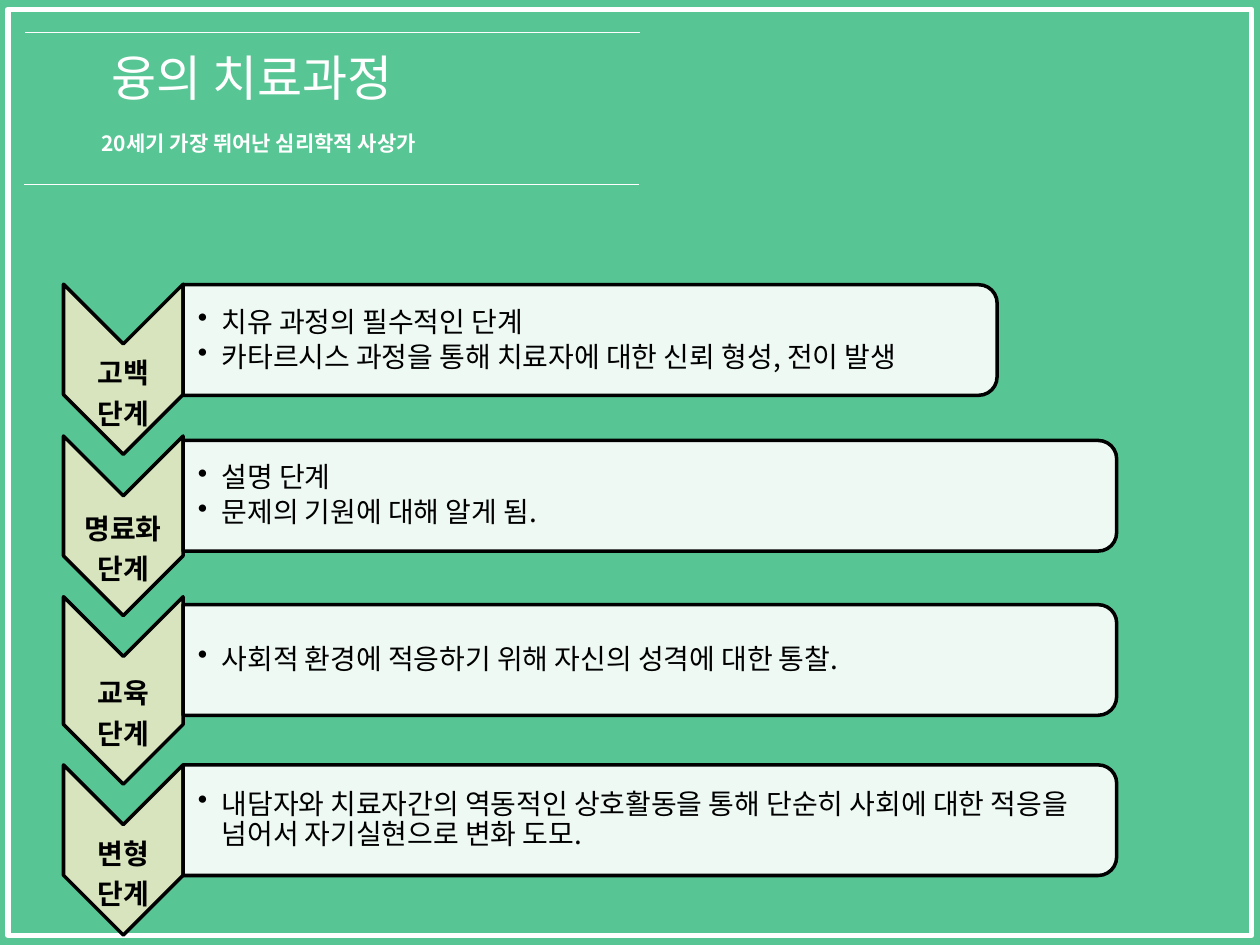
from lxml import etree
from pptx import Presentation
from pptx.dml.color import RGBColor
from pptx.enum.shapes import MSO_CONNECTOR, MSO_SHAPE
from pptx.enum.text import MSO_ANCHOR, PP_ALIGN
from pptx.oxml.ns import qn
from pptx.util import Cm, Pt

RECT, CHEVRON, BAR = MSO_SHAPE.RECTANGLE, MSO_SHAPE.CHEVRON, MSO_SHAPE.ROUND_2_SAME_RECTANGLE
TOP, MIDDLE = MSO_ANCHOR.TOP, MSO_ANCHOR.MIDDLE
LEFT, CENTER = PP_ALIGN.LEFT, PP_ALIGN.CENTER
FONT = "Noto Sans CJK KR"
COLORS = {"green": "57C594", "white": "FFFFFF", "olive": "D7E4BD", "black": "000000"}


def add_shape(kind, x, y, w, h, fill=None, line="black", weight=2, turned=False, alpha=None):
    if turned:
        x, y, w, h = x + (w - h) / 2, y + (h - w) / 2, h, w
    sp = s.shapes.add_shape(kind, Cm(x), Cm(y), Cm(w), Cm(h))
    sp.rotation = 90 if turned else 0
    sp.shadow.inherit = False
    if fill:
        sp.fill.solid()
        sp.fill.fore_color.rgb = RGBColor.from_string(COLORS[fill])
    else:
        sp.fill.background()
    if alpha:
        color = sp.fill._xPr.find(".//" + qn("a:srgbClr"))
        etree.SubElement(color, qn("a:alpha")).set("val", str(alpha * 1000))
    sp.line.color.rgb = RGBColor.from_string(COLORS[line])
    sp.line.width = Pt(weight)


def set_text(sp, lines, size=16, color="black", bold=False, align=LEFT, anchor=MIDDLE,
             margins=None, spacing=None, after=0, bullet=False):
    tf = sp.text_frame
    tf.word_wrap = True
    tf.vertical_anchor = anchor
    if margins:
        tf.margin_left, tf.margin_top, tf.margin_right, tf.margin_bottom = map(Cm, margins)
    for i, text in enumerate(lines):
        p = tf.paragraphs[0] if i == 0 else tf.add_paragraph()
        p.alignment = align
        p.space_after = Pt(after)
        if spacing:
            p.line_spacing = Pt(spacing)
        if bullet:
            pPr = p._p.get_or_add_pPr()
            pPr.set("marL", str(Cm(0.48)))
            pPr.set("indent", str(Cm(-0.48)))
            etree.SubElement(pPr, qn("a:buChar")).set("char", "•")
        r = p.add_run()
        r.text = text
        r.font.name = FONT
        r.font.size = Pt(size)
        r.font.bold = bold
        r.font.color.rgb = RGBColor.from_string(COLORS[color])
        etree.SubElement(r._r.get_or_add_rPr(), qn("a:ea")).set("typeface", FONT)


prs = Presentation()
prs.slide_width, prs.slide_height = Cm(25.4), Cm(19.05)
s = prs.slides.add_slide(prs.slide_layouts[5])

add_shape(RECT, 0, 0, 25.4, 19.05, fill="green", line="green")
add_shape(RECT, 0.16, 0.19, 25.07, 18.67, line="white", weight=3)

title = s.shapes.title
title._element.getparent().append(title._element)
title.left, title.top, title.width, title.height = Cm(1.57), Cm(0.58), Cm(7.04), Cm(1.96)
set_text(title, ["융의 치료과정"], size=28, color="white", align=CENTER)

steps = [
    ("고백", 5.73, 3.43, 5.74, 16.41,
     ["치유 과정의 필수적인 단계", "카타르시스 과정을 통해 치료자에 대한 신뢰 형성, 전이 발생"]),
    ("명료화", 8.79, 3.62, 8.88, 18.82, ["설명 단계", "문제의 기원에 대해 알게 됨."]),
    ("교육", 12.03, 3.78, 12.19, 18.82, ["사회적 환경에 적응하기 위해 자신의 성격에 대한 통찰."]),
    ("변형", 15.42, 3.43, 15.42, 18.82,
     ["내담자와 치료자간의 역동적인 상호활동을 통해 단순히 사회에 대한 적응을 넘어서 자기실현으로 변화 도모."]),
]
for name, chevron_y, chevron_h, bar_y, bar_w, points in steps:
    add_shape(CHEVRON, 1.28, chevron_y, 2.41, chevron_h, fill="olive", turned=True)
    tb = s.shapes.add_textbox(Cm(1.28), Cm(bar_y + 1.5), Cm(2.41), Cm(1.5))
    set_text(tb, [name, "단계"], bold=True, align=CENTER, anchor=TOP,
             margins=(0.03, 0, 0.03, 0), spacing=17.4, after=5.6)
    add_shape(BAR, 3.69, bar_y, bar_w, 2.23, fill="white", turned=True, alpha=90)
    tb = s.shapes.add_textbox(Cm(3.69), Cm(bar_y + 0.11), Cm(bar_w - 0.11), Cm(2.01))
    set_text(tb, points, margins=(0.3, 0.03, 0.03, 0.03), spacing=17.4, after=2.6, bullet=True)

for x, y in [(0.51, 0.66), (0.48, 3.72)]:
    line = s.shapes.add_connector(MSO_CONNECTOR.STRAIGHT, Cm(x), Cm(y), Cm(x + 12.4), Cm(y))
    line.line.color.rgb = RGBColor.from_string(COLORS["white"])
    line.line.width = Pt(0.75)
    etree.SubElement(line._element.spPr, qn("a:effectLst"))

tb = s.shapes.add_textbox(Cm(1.8), Cm(2.41), Cm(11.61), Cm(0.86))
set_text(tb, ["20세기 가장 뛰어난 심리학적 사상가"], size=12, color="white", bold=True,
         anchor=TOP, spacing=17)

prs.save("out.pptx")
